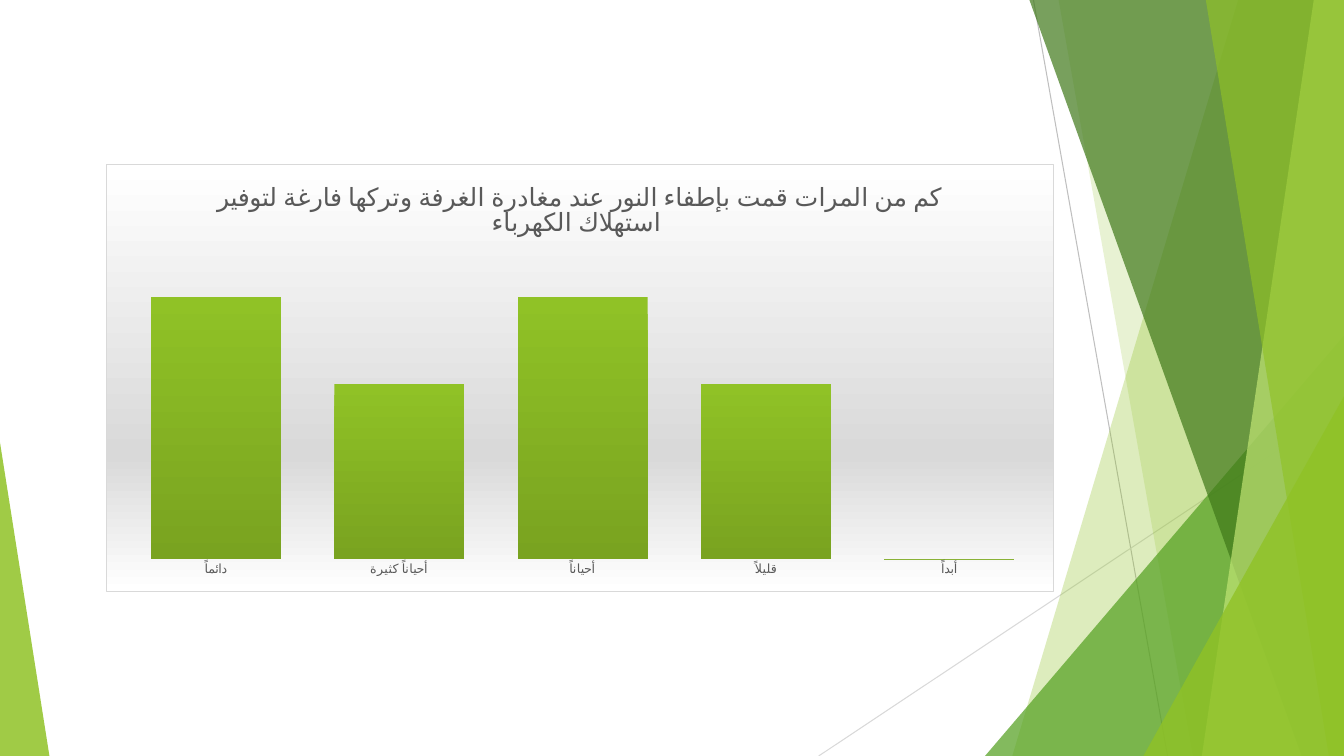
"""Build a slide with a survey column chart framed by translucent green facets."""
from dataclasses import dataclass

from lxml import etree
from pptx import Presentation
from pptx import util as u
from pptx.chart.chart import Chart
from pptx.chart.data import CategoryChartData
from pptx.dml.color import RGBColor
from pptx.enum import chart as charts
from pptx.enum import shapes
from pptx.oxml import ns, parse_xml
from pptx.shapes.base import BaseShape
from pptx.slide import Slide

PX = 9144
WIDTH, HEIGHT = 1333, 750


@dataclass(frozen=True)
class Theme:
    green: str = "90C226"
    shade: str = "79A320"
    leaf: str = "54A021"
    forest: str = "3F7819"
    lime: str = "C0E474"
    white: str = "FFFFFF"
    silver: str = "D9D9D9"
    grey: str = "BFBFBF"
    ink: str = "595959"
    font: str = "Lato"
    title_size: float = 18
    label_size: float = 9
    line_width: float = 0.75


@dataclass(frozen=True)
class Ray:
    start: tuple[int, int]
    end: tuple[int, int]
    color: str


@dataclass(frozen=True)
class Facet:
    points: tuple[tuple[int, int], ...]
    color: str
    opacity: int


@dataclass(frozen=True)
class Corner:
    left: int
    top: int
    width: int
    apex: float
    color: str
    opacity: int


THEME = Theme()
RAYS = (
    Ray((1025, 0), (1158, HEIGHT), THEME.grey),
    Ray((WIDTH, 403), (812, HEIGHT), THEME.silver),
)


def band(top_left: int, bottom_left: int, color: str, opacity: int) -> Facet:
    """Return a facet that runs from a slanted left side to the slide's right edge."""
    points = ((top_left, 0), (WIDTH, 0), (WIDTH, HEIGHT), (bottom_left, HEIGHT))
    return Facet(points, color, opacity)


DECOR = (
    band(1228, 1004, THEME.green, 30),
    band(1050, 1183, THEME.green, 20),
    Corner(977, 333, 356, 1, THEME.leaf, 72),
    band(1021, 1291, THEME.forest, 70),
    band(1303, 1192, THEME.lime, 70),
    band(1196, 1318, THEME.green, 65),
    Corner(1134, 393, 199, 1, THEME.green, 80),
    Corner(0, 439, 49, 0, THEME.green, 85),
)
QUESTION = "كم من المرات قمت بإطفاء النور عند مغادرة الغرفة وتركها فارغة لتوفير استهلاك الكهرباء "
ANSWERS = {"دائماً": 100, "أحياناً كثيرة": 67, "أحياناً": 100, "قليلاً": 67, "أبداً": 0}


def rgb(color: str) -> RGBColor:
    """Convert a hex string to a colour."""
    return RGBColor.from_string(color)


def draw_ray(page: Slide, ray: Ray) -> None:
    """Draw a thin line without a shadow."""
    ends = [u.Emu(value * PX) for value in ray.start + ray.end]
    line = page.shapes.add_connector(shapes.MSO_CONNECTOR.STRAIGHT, *ends)
    line.line.color.rgb = rgb(ray.color)
    line.line.width = u.Pt(THEME.line_width)
    etree.SubElement(line.element.spPr, ns.qn("a:effectLst"))


def outline(page: Slide, item: Facet | Corner) -> BaseShape:
    """Add the bare shape of a facet or a corner triangle."""
    if isinstance(item, Facet):
        builder = page.shapes.build_freeform(*item.points[0], scale=PX)
        builder.add_line_segments(item.points[1:], close=True)
        return builder.convert_to_shape()
    frame = (item.left, item.top, item.width, HEIGHT - item.top)
    triangle = page.shapes.add_shape(
        shapes.MSO_SHAPE.ISOSCELES_TRIANGLE, *(u.Emu(value * PX) for value in frame)
    )
    triangle.adjustments[0] = item.apex
    return triangle


def draw_decor(page: Slide, item: Facet | Corner) -> None:
    """Draw a translucent shape without a line."""
    shape = outline(page, item)
    shape.shadow.inherit = False
    shape.line.fill.background()
    shape.fill.solid()
    shape.fill.fore_color.rgb = rgb(item.color)
    color = shape.element.spPr.find(".//" + ns.qn("a:srgbClr"))
    etree.SubElement(color, ns.qn("a:alpha"), val=str(item.opacity * 1000))


def format_frame(chart: Chart) -> None:
    """Give the chart area its gradient and border, and fix the plot's place."""
    stops = "".join(
        f'<a:gs pos="{place * 1000}"><a:srgbClr val="{color}"/></a:gs>'
        for place, color in ((0, THEME.white), (68, THEME.silver), (100, THEME.white))
    )
    area = chart.element.find(ns.qn("c:chart"))
    area.addnext(parse_xml(
        f'<c:spPr {ns.nsdecls("c", "a")}><a:gradFill><a:gsLst>{stops}</a:gsLst>'
        f'<a:lin ang="5400000" scaled="0"/></a:gradFill>'
        f'<a:ln w="{u.Pt(THEME.line_width)}"><a:solidFill>'
        f'<a:srgbClr val="{THEME.silver}"/></a:solidFill></a:ln></c:spPr>'
    ))
    plot = area.find(ns.qn("c:plotArea"))
    for old in plot.findall(ns.qn("c:layout")):
        plot.remove(old)
    places = {"xMode": "edge", "yMode": "edge", "x": 0.019, "y": 0.209, "w": 0.968, "h": 0.716}
    parts = "".join(f'<c:{name} val="{value}"/>' for name, value in places.items())
    plot.insert(0, parse_xml(
        f'<c:layout {ns.nsdecls("c")}><c:manualLayout><c:layoutTarget val="inner"/>'
        f"{parts}</c:manualLayout></c:layout>"
    ))


def format_title(chart: Chart, text: str, *, size: float, color: str) -> None:
    """Write the chart title in the given size and colour."""
    chart.has_title = True
    para = chart.chart_title.text_frame.paragraphs[0]
    span = para.add_run()
    span.text = text
    for font in (para.font, span.font):
        font.name = THEME.font
        font.size = u.Pt(size)
        font.bold = False
        font.color.rgb = rgb(color)


def draw_chart(page: Slide) -> None:
    """Draw the survey answers as gradient columns."""
    data = CategoryChartData()
    data.categories = list(ANSWERS)
    data.add_series("Series 1", list(ANSWERS.values()))
    frame = [u.Emu(value * PX) for value in (105, 163, 940, 424)]
    kind = charts.XL_CHART_TYPE.COLUMN_CLUSTERED
    chart = page.shapes.add_chart(kind, *frame, data).chart
    chart.has_legend = False
    chart.font.name = THEME.font
    chart.font.size = u.Pt(THEME.label_size)
    chart.font.color.rgb = rgb(THEME.ink)
    format_title(chart, QUESTION, size=THEME.title_size, color=THEME.ink)
    format_frame(chart)

    answers = chart.category_axis
    answers.major_tick_mark = charts.XL_TICK_MARK.NONE
    answers.format.line.fill.background()
    scale = chart.value_axis
    scale.minimum_scale, scale.maximum_scale = 0, 116.67
    scale.has_major_gridlines = False
    scale.visible = False

    columns = chart.plots[0]
    columns.gap_width = 41
    columns.vary_by_categories = False
    fill = columns.series[0].format.fill
    fill.gradient()
    fill.gradient_angle = 270
    for stop, color in zip(fill.gradient_stops, (THEME.green, THEME.shade)):
        stop.color.rgb = rgb(color)


def main() -> None:
    """Build and save the deck."""
    deck = Presentation()
    deck.slide_width, deck.slide_height = u.Emu(WIDTH * PX), u.Emu(HEIGHT * PX)
    page = deck.slides.add_slide(deck.slide_layouts[6])
    for ray in RAYS:
        draw_ray(page, ray)
    for item in DECOR:
        draw_decor(page, item)
    draw_chart(page)
    deck.save("out.pptx")


if __name__ == "__main__":
    main()
